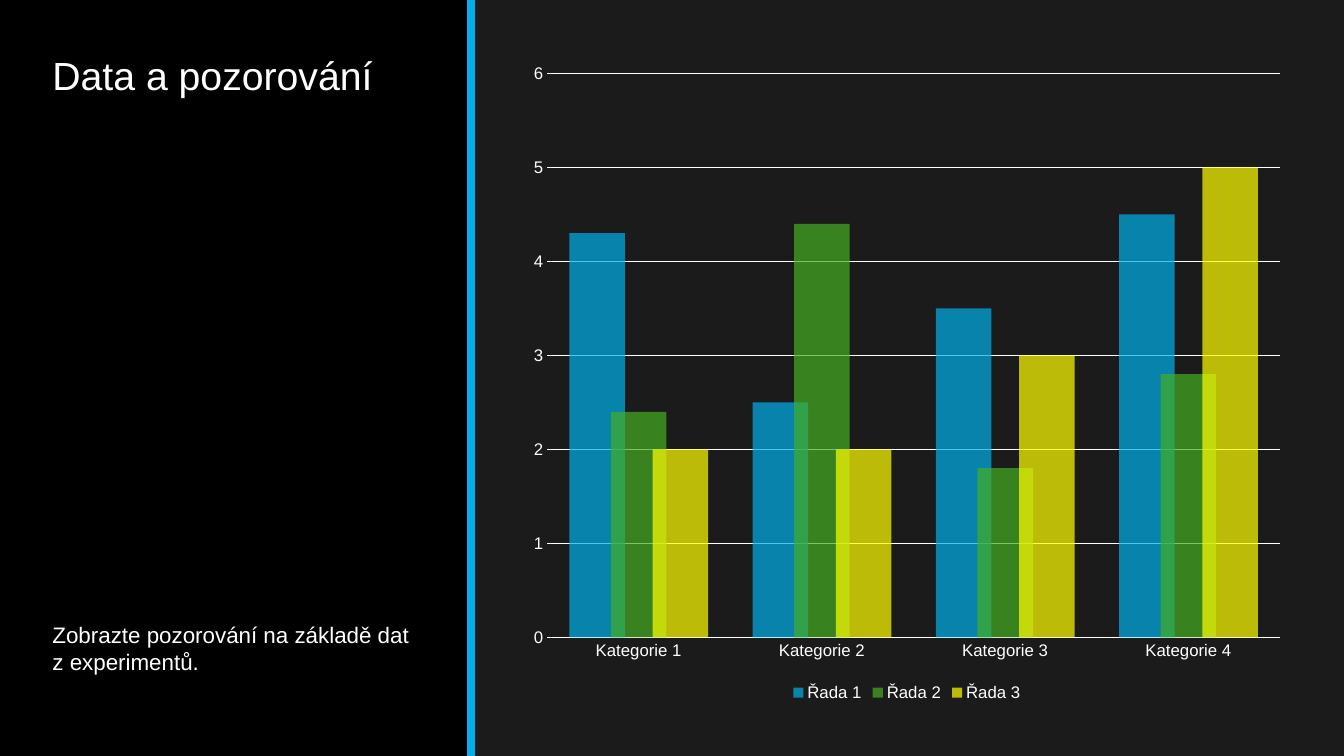
from lxml import etree
from pptx import Presentation
from pptx.chart.data import CategoryChartData
from pptx.dml.color import RGBColor
from pptx.enum.chart import XL_CHART_TYPE as ChartType, XL_LEGEND_POSITION as LegendPosition
from pptx.enum.chart import XL_TICK_MARK as TickMark
from pptx.enum.shapes import MSO_CONNECTOR as Connector, MSO_SHAPE as Shape
from pptx.enum.text import MSO_ANCHOR as Anchor, MSO_AUTO_SIZE as AutoSize, PP_ALIGN as Align
from pptx.oxml.ns import qn
from pptx.util import Inches, Pt

WHITE = RGBColor(0xFF, 0xFF, 0xFF)
BLACK = RGBColor(0x00, 0x00, 0x00)
CHARCOAL = RGBColor(0x1B, 0x1B, 0x1B)
BLUE = RGBColor(0x00, 0xB0, 0xEA)
GREEN = RGBColor(0x45, 0xAE, 0x22)
YELLOW = RGBColor(0xFF, 0xFF, 0x00)
FONT = "Arial"
PANEL_WIDTH = Inches(4.67)


def style_font(font, size):
    font.name = FONT
    font.size = Pt(size)
    font.color.rgb = WHITE


def write_text(shape, text, *, top, height, size, anchor, line_spacing=1.0, space_before=0):
    """Place a placeholder in the left panel and fill it with one formatted paragraph."""
    shape.left, shape.top = Inches(0.42), Inches(top)
    shape.width, shape.height = Inches(3.83), Inches(height)
    frame = shape.text_frame
    frame.word_wrap = True
    frame.auto_size = AutoSize.NONE
    frame.vertical_anchor = anchor
    paragraph = frame.paragraphs[0]
    paragraph.alignment = Align.LEFT
    paragraph.line_spacing = line_spacing
    paragraph.space_before = Pt(space_before)
    run = paragraph.add_run()
    run.text = text
    style_font(run.font, size)


presentation = Presentation()
presentation.slide_width, presentation.slide_height = Inches(13.33), Inches(7.5)
slide = presentation.slides.add_slide(presentation.slide_layouts[1])
slide.background.fill.solid()
slide.background.fill.fore_color.rgb = CHARCOAL

# Left panel and its edge
panel = slide.shapes.add_shape(Shape.RECTANGLE, 0, 0, PANEL_WIDTH, presentation.slide_height)
panel.shadow.inherit = False
panel.fill.solid()
panel.fill.fore_color.rgb = BLACK
panel.line.fill.background()

edge = slide.shapes.add_connector(
    Connector.STRAIGHT, PANEL_WIDTH, 0, PANEL_WIDTH, presentation.slide_height)
edge.line.color.rgb = BLUE
edge.line.width = Pt(6)
etree.SubElement(edge.element.spPr, qn("a:effectLst"))

# Title and body, brought in front of the panel
title, body = slide.placeholders
for placeholder in (title, body):
    slide.shapes.element.append(placeholder.element)
write_text(title, "Data a pozorování", top=0.51, height=1.75, size=28,
           anchor=Anchor.TOP, line_spacing=0.9)
write_text(body, "Zobrazte pozorování na základě dat z experimentů.", top=4.1, height=2.65,
           size=16, anchor=Anchor.BOTTOM, space_before=22)
body_properties = body.text_frame.paragraphs[0].runs[0].font
paragraph_properties = body.text_frame.paragraphs[0]._p.get_or_add_pPr()
paragraph_properties.set("marL", "0")
paragraph_properties.set("indent", "0")
etree.SubElement(paragraph_properties, qn("a:buNone"))

# Chart
chart_data = CategoryChartData()
chart_data.categories = [f"Kategorie {number}" for number in range(1, 5)]
chart_data.add_series("Řada 1", (4.3, 2.5, 3.5, 4.5))
chart_data.add_series("Řada 2", (2.4, 4.4, 1.8, 2.8))
chart_data.add_series("Řada 3", (2, 2, 3, 5))
chart = slide.shapes.add_chart(
    ChartType.COLUMN_CLUSTERED, Inches(5.14), Inches(0.51), Inches(7.71), Inches(6.49),
    chart_data).chart
chart.has_title = False
style_font(chart.font, 10)

plot = chart.plots[0]
plot.vary_by_categories = False
plot.gap_width = 80
plot.overlap = 25
for series, color in zip(plot.series, (BLUE, GREEN, YELLOW)):
    fill = series.format.fill
    fill.solid()
    fill.fore_color.rgb = color
    color_element = series.format.element.find(".//" + qn("a:srgbClr")) if hasattr(
        series.format, "element") else series._element.find(".//" + qn("a:srgbClr"))
    etree.SubElement(color_element, qn("a:alpha"), val="70000")

for axis in (chart.category_axis, chart.value_axis):
    axis.major_tick_mark = axis.minor_tick_mark = TickMark.NONE
    style_font(axis.tick_labels.font, 12)
chart.category_axis.format.line.color.rgb = WHITE
chart.category_axis.format.line.width = Pt(1.25)

value_axis = chart.value_axis
value_axis.minimum_scale, value_axis.maximum_scale, value_axis.major_unit = 0, 6, 1
value_axis.format.line.fill.background()
value_axis.has_major_gridlines = True
value_axis.major_gridlines.format.line.color.rgb = WHITE
value_axis.major_gridlines.format.line.width = Pt(0.75)

chart.has_legend = True
chart.legend.position = LegendPosition.BOTTOM
chart.legend.include_in_layout = False
style_font(chart.legend.font, 12)

presentation.save("out.pptx")
